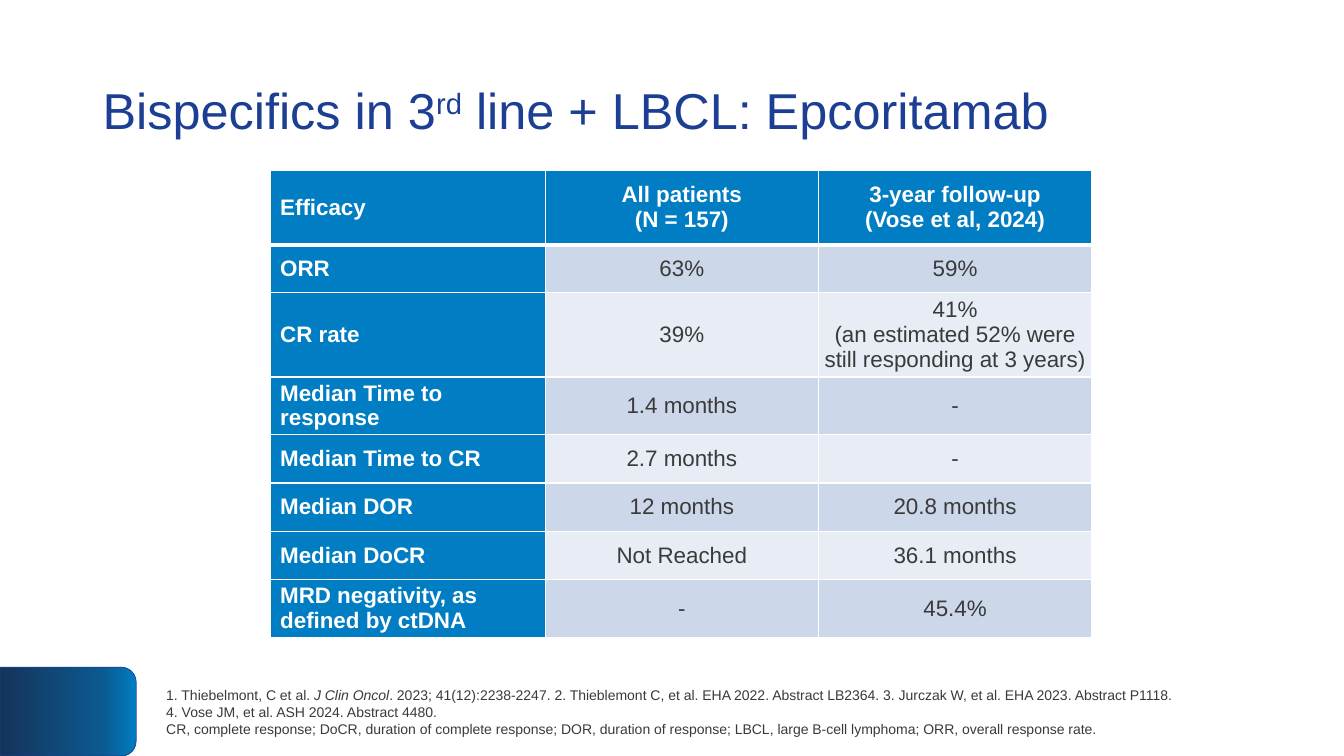
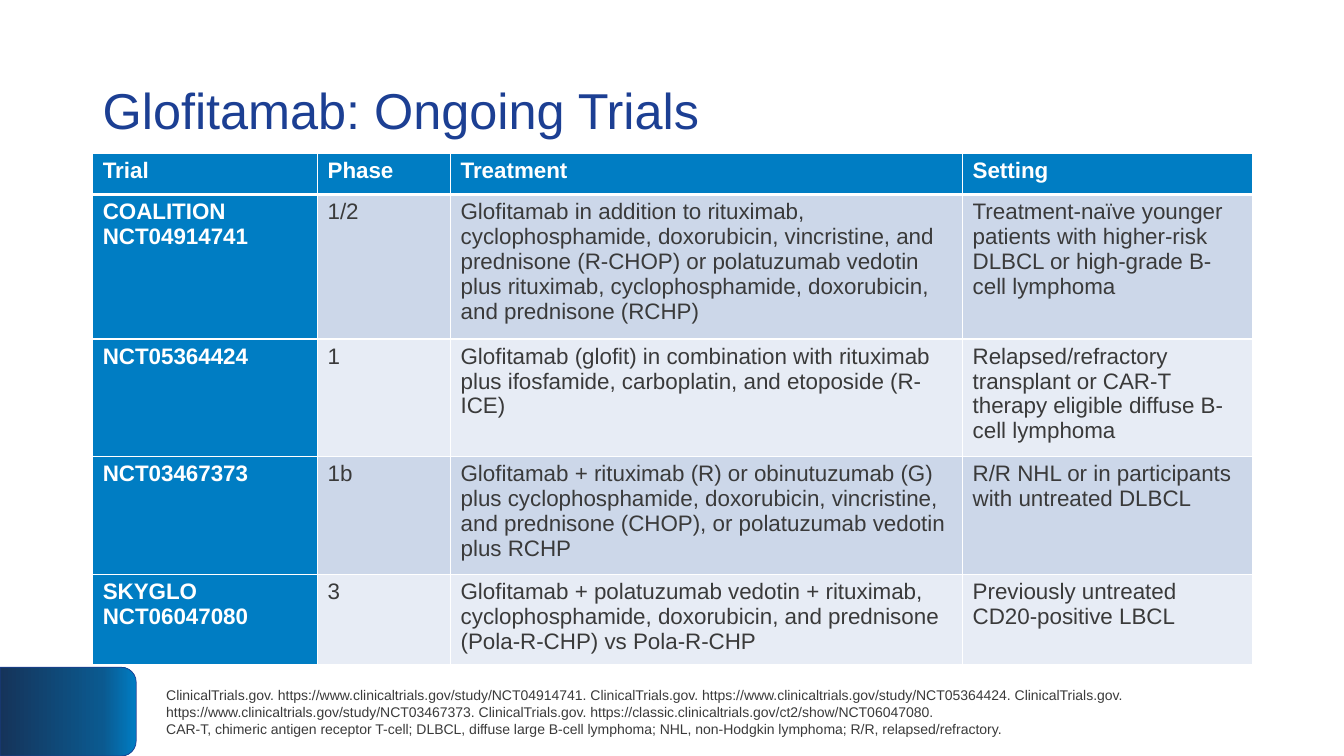
from copy import deepcopy

from lxml.etree import SubElement
from pptx import Presentation
from pptx.dml.color import RGBColor
from pptx.enum.shapes import MSO_SHAPE
from pptx.enum.text import MSO_ANCHOR, PP_ALIGN
from pptx.oxml.ns import qn
from pptx.util import Inches, Pt

SLIDE_WIDTH = Inches(13.33)
SLIDE_HEIGHT = Inches(7.5)
FONT = "Arial"

WHITE = RGBColor(0xFF, 0xFF, 0xFF)
TITLE_BLUE = RGBColor(0x1C, 0x3F, 0x93)
HEADER_BLUE = RGBColor(0x00, 0x7D, 0xC3)
MID_BLUE = RGBColor(0x0B, 0x59, 0x8F)
NAVY = RGBColor(0x15, 0x34, 0x5A)
BODY_GREY = RGBColor(0x3A, 0x3A, 0x3A)
BANDS = (RGBColor(0xCC, 0xD7, 0xE9), RGBColor(0xE7, 0xEC, 0xF5))

# Shared positions, in percent of the slide's width or height
MARGIN = 6.9
CONTENT_WIDTH = 86.27
FOOTER_LEFT = 11.63
FOOTER_TOP = 88.27
FOOTER_HEIGHT = 11.73
TAB_WIDTH = 10.13


def across(percent):
    return round(SLIDE_WIDTH * percent / 100)


def down(percent):
    return round(SLIDE_HEIGHT * percent / 100)


def write_text(frame, paragraphs, *, size, color, bold=False,
               align=PP_ALIGN.LEFT, line_spacing=None):
    """Write paragraphs; each is a string or a list of (text, style) runs."""
    frame.word_wrap = True
    for index, content in enumerate(paragraphs):
        paragraph = frame.paragraphs[0] if index == 0 else frame.add_paragraph()
        paragraph.alignment = align
        if line_spacing:
            paragraph.line_spacing = line_spacing
        runs = [(content, "")] if isinstance(content, str) else content
        for text, style in runs:
            run = paragraph.add_run()
            run.text = text
            run.font.name = FONT
            run.font.size = Pt(size)
            run.font.bold = bold
            run.font.color.rgb = color
            if style == "italic":
                run.font.italic = True
            elif style == "superscript":
                run._r.get_or_add_rPr().set("baseline", "30000")


def add_text(slide, left, top, width, height, paragraphs, **text_format):
    box = slide.shapes.add_textbox(across(left), down(top),
                                   across(width), down(height))
    box.text_frame.vertical_anchor = MSO_ANCHOR.MIDDLE
    write_text(box.text_frame, paragraphs, **text_format)


def add_corner_tab(slide):
    # The shape is turned a quarter, so its width and height swap
    length, thickness = across(TAB_WIDTH), down(FOOTER_HEIGHT)
    shift = (length - thickness) // 2
    shape = slide.shapes.add_shape(MSO_SHAPE.ROUND_2_SAME_RECTANGLE, shift,
                                   down(FOOTER_TOP) - shift, thickness, length)
    shape.rotation = 90
    shape.shadow.inherit = False
    shape.line.color.rgb = TITLE_BLUE
    shape.line.width = Pt(0.5)
    shape.fill.gradient()
    shape.fill.gradient_angle = 270
    stop_list = shape.fill._fill._gradFill.find(qn("a:gsLst"))
    stop_list.insert(1, deepcopy(stop_list[0]))
    stops = ((0, HEADER_BLUE), (0.25, MID_BLUE), (1, NAVY))
    for stop, (position, color) in zip(shape.fill.gradient_stops, stops):
        stop.position = position
        stop.color.rgb = color


def add_base_slide(presentation, title, footer, footer_width):
    slide = presentation.slides.add_slide(presentation.slide_layouts[6])
    add_corner_tab(slide)
    add_text(slide, MARGIN, 5.33, CONTENT_WIDTH, 19.33, [title],
             size=36, color=TITLE_BLUE, line_spacing=0.9)
    add_text(slide, FOOTER_LEFT, FOOTER_TOP, footer_width, FOOTER_HEIGHT,
             footer, size=10, color=BODY_GREY)
    return slide


def set_borders(cell, row_index):
    # The rule under the header row is thicker
    widths = {"L": 1, "R": 1, "T": 3 if row_index == 1 else 1,
              "B": 3 if row_index == 0 else 1}
    properties = cell._tc.get_or_add_tcPr()
    for side, width in widths.items():
        line = SubElement(properties, qn(f"a:ln{side}"), w=str(Pt(width)))
        fill = SubElement(line, qn("a:solidFill"))
        SubElement(fill, qn("a:srgbClr"), val=str(WHITE))


def add_table(slide, left, top, columns, heights, rows, centered=False):
    table = slide.shapes.add_table(
        len(rows), len(columns), across(left), down(top),
        across(sum(columns)), down(sum(heights))).table
    table.first_row = table.horz_banding = False
    for column, width in zip(table.columns, columns):
        column.width = across(width)
    for row, height in zip(table.rows, heights):
        row.height = down(height)

    for row_index, row in enumerate(rows):
        for column_index, text in enumerate(row):
            cell = table.cell(row_index, column_index)
            heading = row_index == 0 or column_index == 0
            set_borders(cell, row_index)
            cell.fill.solid()
            cell.fill.fore_color.rgb = (
                HEADER_BLUE if heading else BANDS[(row_index - 1) % 2])
            align = PP_ALIGN.LEFT
            if centered:
                cell.vertical_anchor = MSO_ANCHOR.MIDDLE
                cell.margin_top = cell.margin_bottom = Inches(0.02)
                cell.margin_right = Inches(0.02)
                if column_index > 0:
                    cell.margin_left = Inches(0.02)
                    align = PP_ALIGN.CENTER
            write_text(cell.text_frame, text.split("\n"), size=16, bold=heading,
                       color=WHITE if heading else BODY_GREY, align=align)


def add_efficacy_slide(presentation):
    title = [("Bispecifics in 3", ""), ("rd", "superscript"),
             (" line + LBCL: Epcoritamab", "")]
    footer = [
        [("1. Thiebelmont, C et al. ", ""), ("J Clin Oncol", "italic"),
         (". 2023; 41(12):2238-2247. 2. Thieblemont C, et al. EHA 2022. "
          "Abstract LB2364. 3. Jurczak W, et al. EHA 2023. Abstract P1118. "
          "4. Vose JM, et al. ASH 2024. Abstract 4480.", "")],
        "CR, complete response; DoCR, duration of complete response; "
        "DOR, duration of response; LBCL, large B-cell lymphoma; "
        "ORR, overall response rate.",
    ]
    rows = [
        ("Efficacy", "All patients\n(N = 157)",
         "3-year follow-up\n(Vose et al, 2024)"),
        ("ORR", "63%", "59%"),
        ("CR rate", "39%",
         "41%\n(an estimated 52% were still responding at 3 years)"),
        ("Median Time to response", "1.4 months", "-"),
        ("Median Time to CR", "2.7 months", "-"),
        ("Median DOR", "12 months", "20.8 months"),
        ("Median DoCR", "Not Reached", "36.1 months"),
        ("MRD negativity, as defined by ctDNA", "-", "45.4%"),
    ]
    slide = add_base_slide(presentation, title, footer, 77.25)
    add_table(slide, 20.1, 22.53, (20.47, 20.33, 20.33),
              (9.87, 6.27, 10.5, 7.1, 6.4, 6.4, 6.4, 7.1), rows, centered=True)


def add_trials_slide(presentation):
    footer = [
        "ClinicalTrials.gov. https://www.clinicaltrials.gov/study/NCT04914741. "
        "ClinicalTrials.gov. https://www.clinicaltrials.gov/study/NCT05364424. "
        "ClinicalTrials.gov. https://www.clinicaltrials.gov/study/NCT03467373. "
        "ClinicalTrials.gov. "
        "https://classic.clinicaltrials.gov/ct2/show/NCT06047080.",
        "CAR-T, chimeric antigen receptor T-cell; DLBCL, diffuse large B-cell "
        "lymphoma; NHL, non-Hodgkin lymphoma; R/R, relapsed/refractory.",
    ]
    rows = [
        ("Trial", "Phase", "Treatment", "Setting"),
        ("COALITION\nNCT04914741", "1/2",
         "Glofitamab in addition to rituximab, cyclophosphamide, doxorubicin, "
         "vincristine, and prednisone (R-CHOP) or polatuzumab vedotin plus "
         "rituximab, cyclophosphamide, doxorubicin, and prednisone (RCHP)",
         "Treatment-naïve younger patients with higher-risk DLBCL or "
         "high-grade B-cell lymphoma"),
        ("NCT05364424", "1",
         "Glofitamab (glofit) in combination with rituximab plus ifosfamide, "
         "carboplatin, and etoposide (R-ICE)",
         "Relapsed/refractory transplant or CAR-T therapy eligible diffuse "
         "B-cell lymphoma"),
        ("NCT03467373", "1b",
         "Glofitamab + rituximab (R) or obinutuzumab (G) plus "
         "cyclophosphamide, doxorubicin, vincristine, and prednisone (CHOP), "
         "or polatuzumab vedotin plus RCHP",
         "R/R NHL or in participants with untreated DLBCL"),
        ("SKYGLO\nNCT06047080", "3",
         "Glofitamab + polatuzumab vedotin + rituximab, cyclophosphamide, "
         "doxorubicin, and prednisone (Pola-R-CHP) vs Pola-R-CHP",
         "Previously untreated CD20-positive LBCL"),
    ]
    slide = add_base_slide(presentation, "Glofitamab: Ongoing Trials",
                           footer, 87.4)
    add_table(slide, MARGIN, 20.27, (16.73, 9.9, 38.1, 21.6),
              (5.47, 17.87, 14.5, 14.5, 11.2), rows)


def main():
    presentation = Presentation()
    presentation.slide_width = SLIDE_WIDTH
    presentation.slide_height = SLIDE_HEIGHT
    add_efficacy_slide(presentation)
    add_trials_slide(presentation)
    presentation.save("out.pptx")


if __name__ == "__main__":
    main()
